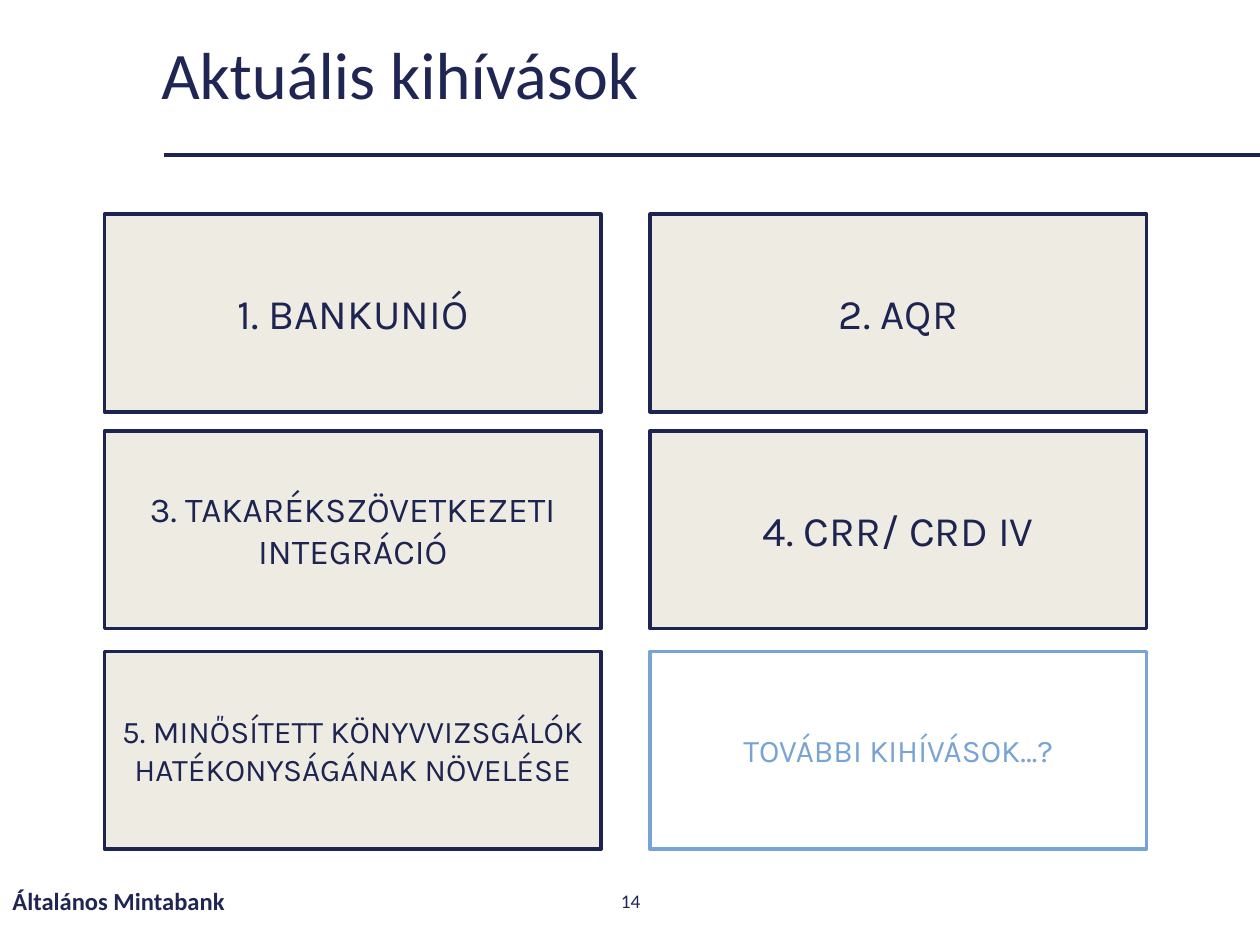
from lxml.etree import SubElement
from pptx import Presentation
from pptx.dml.color import RGBColor
from pptx.enum.shapes import MSO_CONNECTOR, MSO_SHAPE
from pptx.enum.text import MSO_ANCHOR, PP_ALIGN
from pptx.oxml.ns import qn
from pptx.util import Inches, Pt

NAVY, TITLE_NAVY, LIGHT_BLUE, BEIGE = "1E2452", "202653", "78A3D5", "EEECE2"
COLUMN_LEFTS = (0.83, 5.16)
ROW_TOPS = (1.7, 3.42, 5.17)
BOX_WIDTH, BOX_HEIGHT = 3.94, 1.57

# Text and size, in reading order; the last box is the open question
CHALLENGES = [
    ("1. BANKUNIÓ", 24),
    ("2. AQR", 24),
    ("3. TAKARÉKSZÖVETKEZETI INTEGRÁCIÓ", 20),
    ("4. CRR/ CRD IV", 24),
    ("5. MINŐSÍTETT KÖNYVVIZSGÁLÓK HATÉKONYSÁGÁNAK NÖVELÉSE", 18),
    ("TOVÁBBI KIHÍVÁSOK…?", 18),
]


def rgb(color):
    return RGBColor.from_string(color)


def set_text(shape, text, size, color, font="Calibri", align=PP_ALIGN.LEFT, bold=False):
    tf = shape.text_frame
    tf.text = text
    tf.word_wrap = True
    tf.vertical_anchor = MSO_ANCHOR.MIDDLE
    p = tf.paragraphs[0]
    p.alignment = align
    r = p.runs[0]
    r.font.name, r.font.size, r.font.bold = font, Pt(size), bold
    r.font.color.rgb = rgb(color)


def add_title(s, text):
    title = s.shapes.title
    title.left, title.top = Inches(1.18), Inches(0.2)
    title.width, title.height = Inches(8.19), Inches(0.83)
    set_text(title, text, 38, TITLE_NAVY)
    title.text_frame.paragraphs[0].line_spacing = 0.9


def add_title_rule(s, left, right, y):
    line = s.shapes.add_connector(
        MSO_CONNECTOR.STRAIGHT, Inches(left), Inches(y), Inches(right), Inches(y))
    line.line.color.rgb = rgb(NAVY)
    line.line.width = Pt(2.25)
    SubElement(line._element.spPr, qn("a:effectLst"))


def add_footer_text(s, left, width, text, size, **style):
    box = s.shapes.add_textbox(Inches(left), Inches(6.95), Inches(width), Inches(0.4))
    set_text(box, text, size, TITLE_NAVY, **style)


def add_challenge(s, row, column, text, size, color, fill=None):
    box = s.shapes.add_shape(
        MSO_SHAPE.RECTANGLE, Inches(COLUMN_LEFTS[column]), Inches(ROW_TOPS[row]),
        Inches(BOX_WIDTH), Inches(BOX_HEIGHT))
    box.shadow.inherit = False
    if fill:
        box.fill.solid()
        box.fill.fore_color.rgb = rgb(fill)
    else:
        box.fill.background()
    box.line.color.rgb = rgb(color)
    box.line.width = Pt(2)
    SubElement(box.line._get_or_add_ln(), qn("a:round"))
    set_text(box, text, size, color, font="Karla", align=PP_ALIGN.CENTER)


def main():
    prs = Presentation()
    prs.slide_width, prs.slide_height = Inches(10), Inches(7.5)
    s = prs.slides.add_slide(prs.slide_layouts[5])

    add_title_rule(s, 1.3, 10, 1.23)
    add_title(s, "Aktuális kihívások")
    add_footer_text(s, 0, 3.38, "Általános Mintabank", 14, bold=True)
    add_footer_text(s, 3.88, 2.25, "14", 11, align=PP_ALIGN.CENTER)

    for i, (text, size) in enumerate(CHALLENGES):
        is_open = i == len(CHALLENGES) - 1
        color, fill = (LIGHT_BLUE, None) if is_open else (NAVY, BEIGE)
        row, column = divmod(i, len(COLUMN_LEFTS))
        add_challenge(s, row, column, text, size, color, fill)

    prs.save("out.pptx")


if __name__ == "__main__":
    main()
